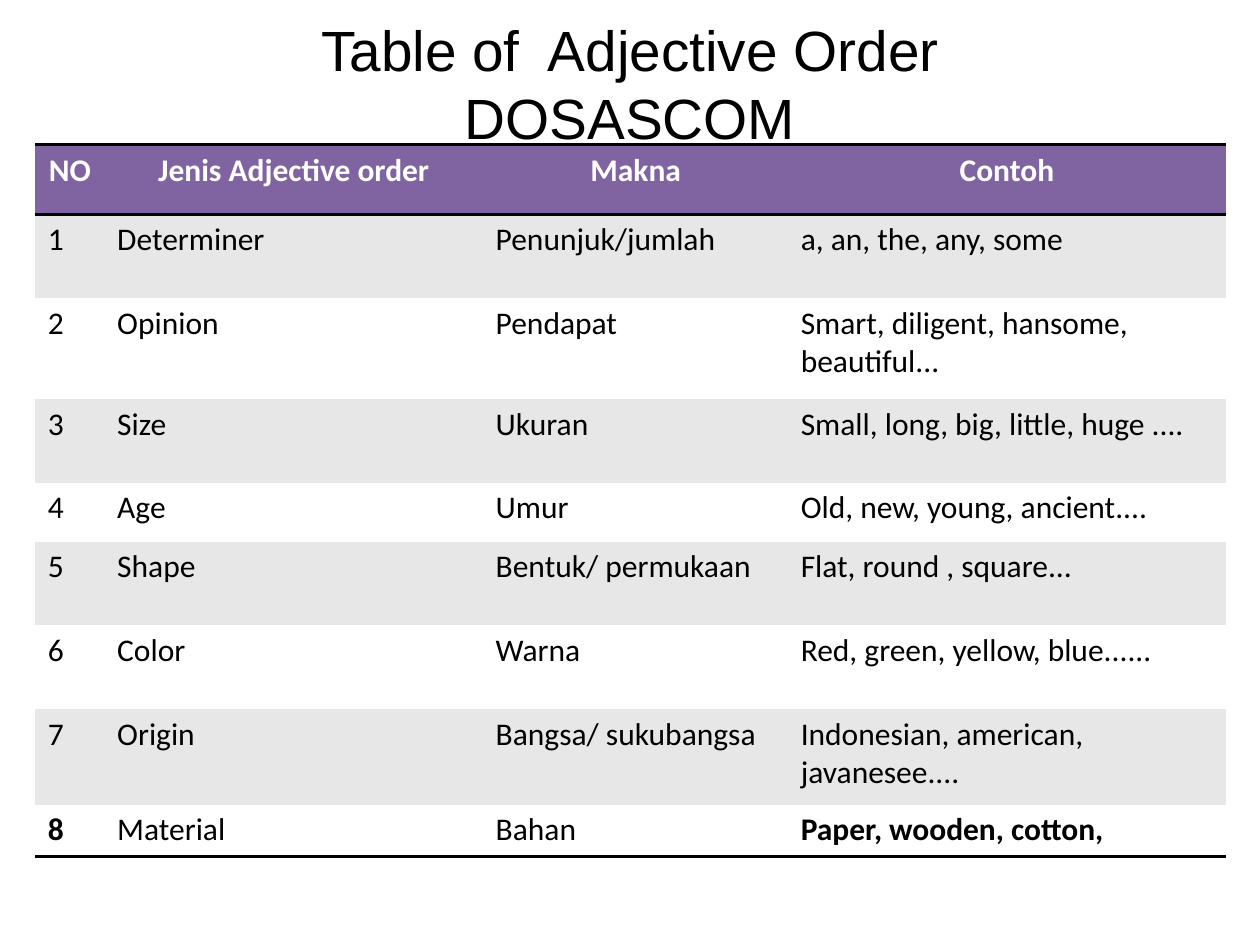
import dataclasses

import pptx
import pptx.dml.color
import pptx.enum.text
import pptx.oxml.ns
import pptx.util
from lxml import etree

Cm = pptx.util.Cm
Pt = pptx.util.Pt
qn = pptx.oxml.ns.qn
PP_ALIGN = pptx.enum.text.PP_ALIGN


@dataclasses.dataclass(frozen=True)
class Theme:
    ink: str = "000000"
    header_ink: str = "FFFFFF"
    header_fill: str = "8064A2"
    bands: tuple = ("E7E7E7", "FFFFFF")
    title_font: str = "Arial"
    body_font: str = "Calibri"
    title_size: float = 32.4
    body_size: float = 18
    rule_width: float = 2


THEME = Theme()
NO_GRID_STYLE = "{2D5ABB26-0587-4C30-8999-92F81FD0307C}"
TITLE_LINES = ["Table of  Adjective Order", "DOSASCOM"]
COLUMN_WIDTHS = [1.4, 7.63, 6.15, 8.82]
ROW_HEIGHTS = [1.4, 1.69, 2.03, 1.69, 1.19, 1.69, 1.68, 1.93, 1.04]
ROWS = [
    ["NO", "Jenis Adjective order", "Makna", "Contoh"],
    ["1", "Determiner", "Penunjuk/jumlah", "a, an, the, any, some"],
    ["2", "Opinion", "Pendapat", "Smart, diligent, hansome, beautiful..."],
    ["3", "Size", "Ukuran", "Small, long, big, little, huge ...."],
    ["4", "Age", "Umur", "Old, new, young, ancient...."],
    ["5", "Shape", "Bentuk/ permukaan", "Flat, round , square..."],
    ["6", "Color", "Warna", "Red, green, yellow, blue......"],
    ["7", "Origin", "Bangsa/ sukubangsa", "Indonesian, american, javanesee...."],
    ["8", "Material", "Bahan", "Paper, wooden, cotton,"],
]
LAST = len(ROWS) - 1


def rgb(value):
    return pptx.dml.color.RGBColor.from_string(value)


def add_run(p, text, font, size, color, bold=False):
    r = p.add_run()
    r.text = text
    r.font.name = font
    r.font.size = Pt(size)
    r.font.bold = bold
    r.font.color.rgb = rgb(color)


def set_title(s):
    sp = s.shapes.title
    sp.left, sp.top, sp.width, sp.height = Cm(1.27), Cm(0.76), Cm(22.86), Cm(3.18)
    tf = sp.text_frame
    tf.word_wrap = True
    tf.auto_size = pptx.enum.text.MSO_AUTO_SIZE.NONE
    tf.vertical_anchor = pptx.enum.text.MSO_ANCHOR.MIDDLE
    tf.margin_bottom = Cm(1.5)
    p = tf.paragraphs[0]
    p.alignment = PP_ALIGN.CENTER
    for i, line in enumerate(TITLE_LINES):
        if i:
            p.add_line_break()
        add_run(p, line, THEME.title_font, THEME.title_size, THEME.ink)


def add_rule(cell, side):
    ln = etree.SubElement(cell._tc.get_or_add_tcPr(), qn("a:" + side))
    ln.set("w", str(Pt(THEME.rule_width)))
    fill = etree.SubElement(ln, qn("a:solidFill"))
    etree.SubElement(fill, qn("a:srgbClr")).set("val", THEME.ink)


def fill_cell(cell, text, row, col):
    header = row == 0
    if header:
        add_rule(cell, "lnT")
    if row in (0, LAST):
        add_rule(cell, "lnB")
    cell.fill.solid()
    cell.fill.fore_color.rgb = rgb(THEME.header_fill if header else THEME.bands[(row - 1) % 2])
    p = cell.text_frame.paragraphs[0]
    p.alignment = PP_ALIGN.CENTER if header else PP_ALIGN.LEFT
    bold = header or (row == LAST and col in (0, 3))
    color = THEME.header_ink if header else THEME.ink
    add_run(p, text, THEME.body_font, THEME.body_size, color, bold)


def add_adjective_table(s):
    frame = s.shapes.add_table(len(ROWS), len(COLUMN_WIDTHS), Cm(0.71), Cm(2.92),
                               Cm(sum(COLUMN_WIDTHS)), Cm(sum(ROW_HEIGHTS)))
    table = frame.table
    table.horz_banding = False
    table._tbl.tblPr.find(qn("a:tableStyleId")).text = NO_GRID_STYLE
    for column, width in zip(table.columns, COLUMN_WIDTHS):
        column.width = Cm(width)
    for row, height in zip(table.rows, ROW_HEIGHTS):
        row.height = Cm(height)
    for i, texts in enumerate(ROWS):
        for j, text in enumerate(texts):
            fill_cell(table.cell(i, j), text, i, j)


def main():
    prs = pptx.Presentation()
    prs.slide_width, prs.slide_height = Cm(25.4), Cm(19.05)
    s = prs.slides.add_slide(prs.slide_layouts[5])
    set_title(s)
    add_adjective_table(s)
    prs.save("out.pptx")


if __name__ == "__main__":
    main()
